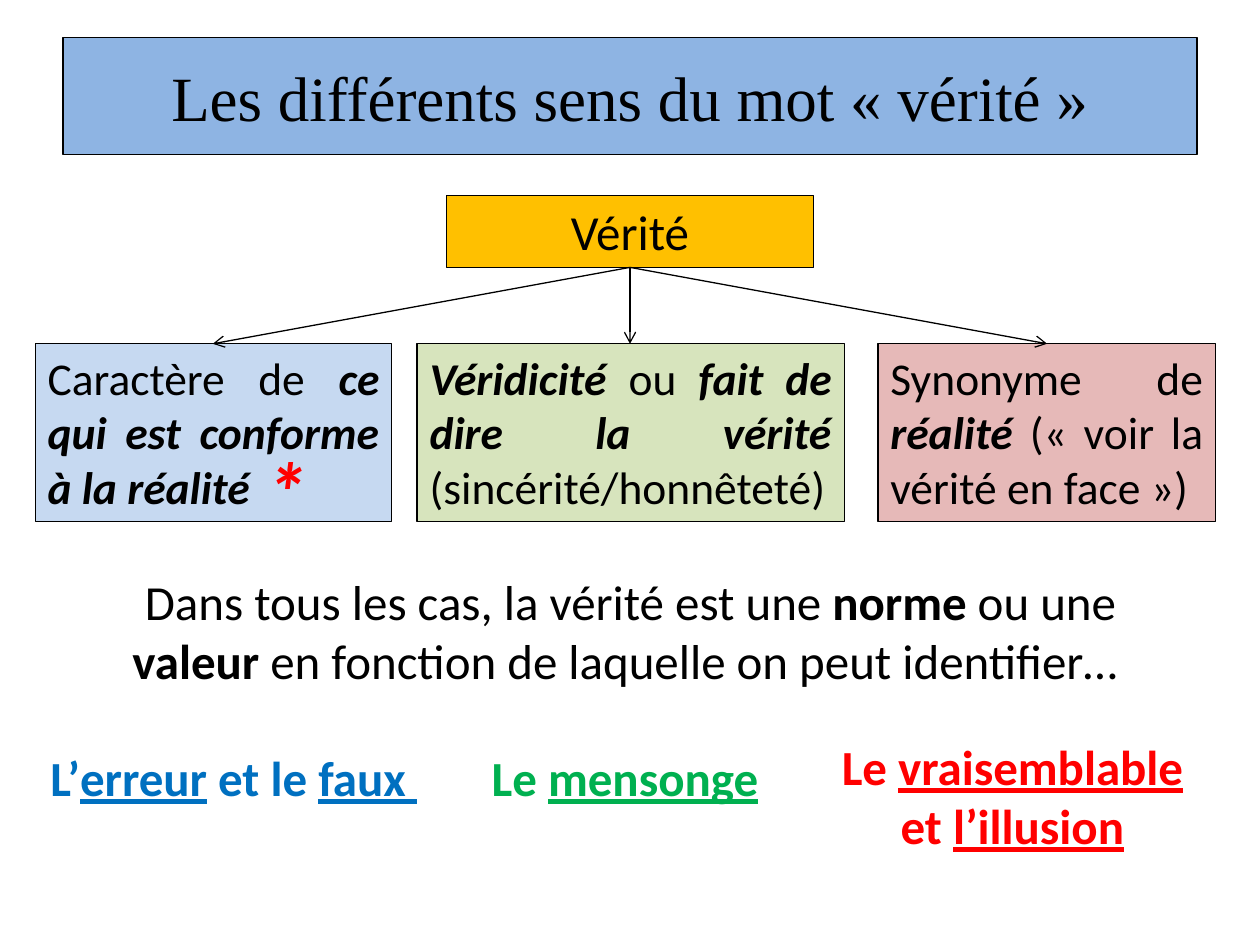
"""Build a slide on the different senses of the word « vérité »."""
from dataclasses import dataclass

from lxml import etree
from pptx import Presentation
from pptx import util as u
from pptx.dml.color import RGBColor
from pptx.enum import shapes, text
from pptx.oxml.ns import qn


@dataclass(frozen=True)
class Theme:
    """Colours, fonts and type sizes of the slide."""
    ink: str = "000000"
    title_fill: str = "8EB4E3"
    root_fill: str = "FFC000"
    conformity_fill: str = "C6D9F1"
    sincerity_fill: str = "D7E4BD"
    reality_fill: str = "E6B9B8"
    blue: str = "0070C0"
    green: str = "00B050"
    red: str = "FF0000"
    heading_font: str = "Times New Roman"
    body_font: str = "Calibri"
    title_size: int = 36
    large: int = 28
    medium: int = 26
    star_size: int = 48
    outline: float = 0.75


THEME = Theme()
ALIGN = text.PP_ALIGN
SLIDE_WIDTH, SLIDE_HEIGHT = 25.4, 19.05
CENTER = SLIDE_WIDTH / 2
ROOT_TOP, ROOT_WIDTH, ROOT_HEIGHT = 3.94, 7.4, 1.45
SENSE_TOP, SENSE_HEIGHT = 6.93, 3.58
ARROW_SPREAD = 8.41

SENSES = [
    (0.71, 7.19, THEME.conformity_fill,
     [("Caractère de ", ""), ("ce qui est conforme à la réalité ", "bi")]),
    (8.41, 8.61, THEME.sincerity_fill,
     [("Véridicité", "bi"), (" ou ", ""), ("fait de dire la vérité ", "bi"),
      ("(sincérité/honnêteté) ", "")]),
    (17.7, 6.81, THEME.reality_fill,
     [("Synonyme de ", ""), ("réalité ", "bi"),
      ("(« voir la vérité en face »)", "")]),
]
OPPOSITES = [
    ((0.71, 14.94, 8, 1.45), THEME.blue,
     [("L’", "b"), ("erreur", "bu"), (" et le ", "b"), ("faux ", "bu")]),
    ((8.71, 14.94, 8, 1.45), THEME.green,
     [("Le ", "b"), ("mensonge", "bu"), (" ", "b")]),
    ((16.31, 14.73, 8.2, 2.64), THEME.red,
     [("Le ", "b"), ("vraisemblable", "bu"), (" et ", "b"),
      ("l’illusion", "bu")]),
]
CONCLUSION = [
    ("Dans tous les cas, la vérité est une ", ""), ("norme", "b"),
    (" ou une ", ""), ("valeur", "b"),
    (" en fonction de laquelle on peut identifier… ", ""),
]


def write_text(shape, runs, *, size=THEME.large, color=THEME.ink,
               font=THEME.body_font, align=ALIGN.CENTER,
               anchor=text.MSO_ANCHOR.TOP, wrap=True):
    """Write (text, style) runs, where the style letters are b, i and u."""
    frame = shape.text_frame
    frame.auto_size = text.MSO_AUTO_SIZE.NONE
    frame.word_wrap = wrap
    frame.vertical_anchor = anchor
    paragraph = frame.paragraphs[0]
    paragraph.alignment = align
    for words, style in runs:
        run = paragraph.add_run()
        run.text = words
        run.font.name = font
        run.font.size = u.Pt(size)
        run.font.color.rgb = RGBColor.from_string(color)
        run.font.bold = "b" in style
        run.font.italic = "i" in style
        run.font.underline = "u" in style


def paint(shape, fill):
    """Give a shape a solid fill and the thin outline."""
    shape.fill.solid()
    shape.fill.fore_color.rgb = RGBColor.from_string(fill)
    outline(shape.line)


def outline(line):
    """Set the thin dark line."""
    line.color.rgb = RGBColor.from_string(THEME.ink)
    line.width = u.Pt(THEME.outline)


def add_title(slide, words):
    """Move, paint and fill the title placeholder."""
    title = slide.shapes.title
    title.left, title.top = u.Cm(1.27), u.Cm(0.76)
    title.width, title.height = u.Cm(22.86), u.Cm(2.36)
    paint(title, THEME.title_fill)
    write_text(title, [(words, "")], size=THEME.title_size,
               font=THEME.heading_font, anchor=text.MSO_ANCHOR.MIDDLE)


def add_box(slide, bounds, fill, runs, **style):
    """Add a filled rectangle with text."""
    box = slide.shapes.add_shape(shapes.MSO_SHAPE.RECTANGLE, *map(u.Cm, bounds))
    box.shadow.inherit = False
    paint(box, fill)
    write_text(box, runs, **style)


def add_label(slide, bounds, runs, **style):
    """Add a plain text box."""
    write_text(slide.shapes.add_textbox(*map(u.Cm, bounds)), runs, **style)


def add_arrow(slide, start, end):
    """Add a straight line with an open arrowhead at its end."""
    arrow = slide.shapes.add_connector(
        shapes.MSO_CONNECTOR.STRAIGHT, *map(u.Cm, (*start, *end)))
    outline(arrow.line)
    etree.SubElement(arrow.line._get_or_add_ln(), qn("a:tailEnd"), type="arrow")
    etree.SubElement(arrow._element.spPr, qn("a:effectLst"))


def main():
    """Build and save the slide."""
    presentation = Presentation()
    presentation.slide_width = u.Cm(SLIDE_WIDTH)
    presentation.slide_height = u.Cm(SLIDE_HEIGHT)
    slide = presentation.slides.add_slide(presentation.slide_layouts[5])

    add_title(slide, "Les différents sens du mot « vérité »")
    add_box(slide, (CENTER - ROOT_WIDTH / 2, ROOT_TOP, ROOT_WIDTH, ROOT_HEIGHT),
            THEME.root_fill, [("Vérité", "")])
    for left, width, fill, runs in SENSES:
        add_box(slide, (left, SENSE_TOP, width, SENSE_HEIGHT), fill, runs,
                size=THEME.medium, align=ALIGN.JUSTIFY)
    for side in (-1, 0, 1):
        add_arrow(slide, (CENTER, ROOT_TOP + ROOT_HEIGHT),
                  (CENTER + side * ARROW_SPREAD, SENSE_TOP))
    for bounds, color, runs in OPPOSITES:
        add_label(slide, bounds, runs, color=color)
    add_label(slide, (2.31, 11.4, 20.8, 2.64), CONCLUSION)
    add_label(slide, (5.11, 8.71, 1.37, 2.31), [("*", "bi")],
              size=THEME.star_size, color=THEME.red, align=ALIGN.LEFT,
              wrap=False)
    presentation.save("out.pptx")


if __name__ == "__main__":
    main()
